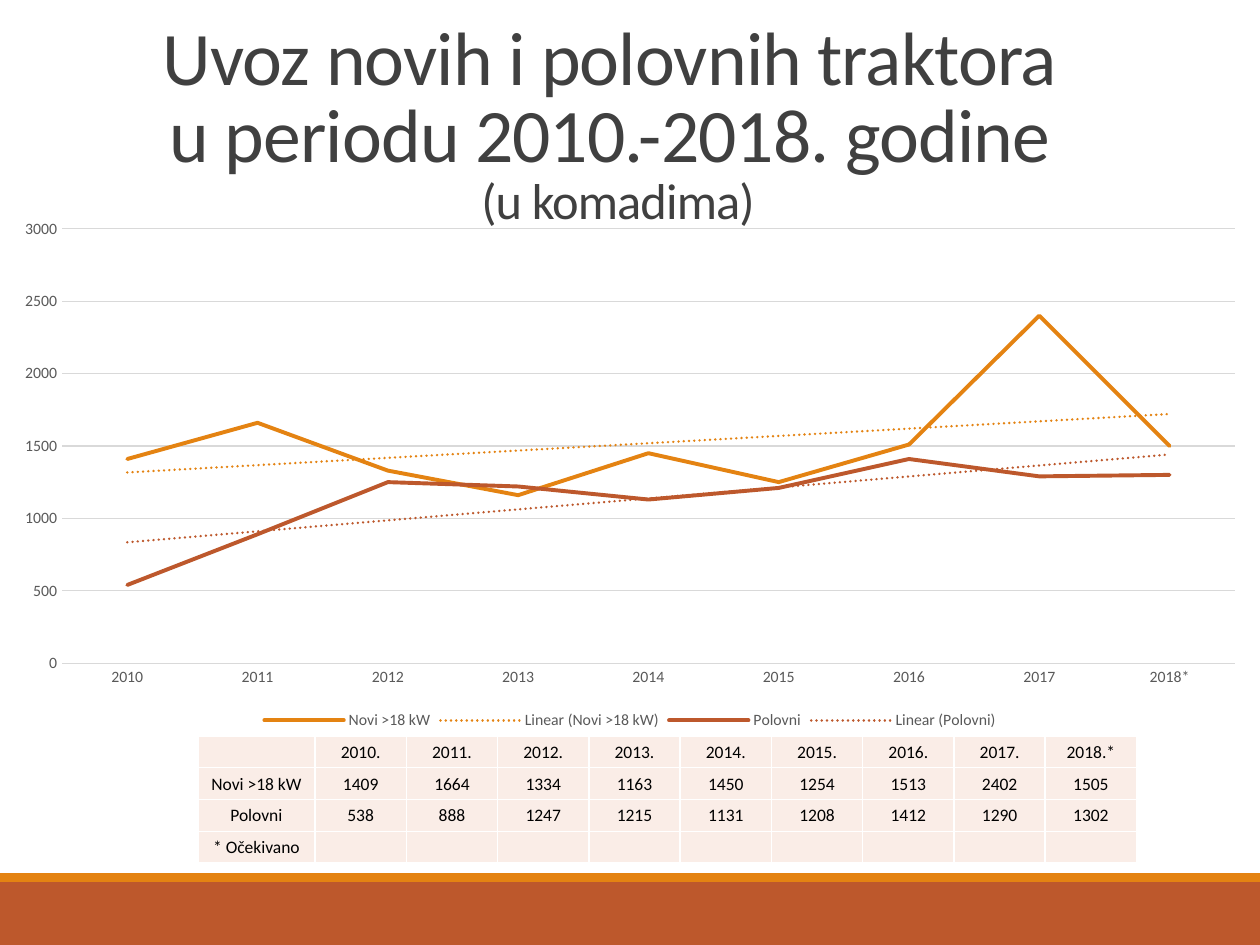
from lxml import etree
from pptx import Presentation
from pptx.chart.data import CategoryChartData
from pptx.dml.color import RGBColor
from pptx.enum.chart import XL_CHART_TYPE as ChartType, XL_LEGEND_POSITION as LegendPos, XL_TICK_MARK as Tick
from pptx.enum.shapes import MSO_SHAPE as Shape
from pptx.enum.text import MSO_ANCHOR as Anchor, PP_ALIGN as Align
from pptx.oxml import parse_xml
from pptx.oxml.ns import nsdecls, qn
from pptx.util import Inches, Pt

FONT = "Calibri"
ORANGE = RGBColor(0xE4, 0x83, 0x12)
RUST = RGBColor(0xBD, 0x58, 0x2C)
BLUSH = RGBColor(0xFA, 0xED, 0xE7)
BLACK = RGBColor(0, 0, 0)
TITLE_GREY = RGBColor(0x40, 0x40, 0x40)
LABEL_GREY = RGBColor(0x59, 0x59, 0x59)
GRID_GREY = RGBColor(0xD9, 0xD9, 0xD9)

# Content
TITLE_LINES = [
    ("Uvoz novih i polovnih traktora ", 43.2),
    ("u periodu 2010.-2018. godine ", 43.2),
    ("(u komadima)", 28.8),
]
YEARS = ["2010", "2011", "2012", "2013", "2014", "2015", "2016", "2017", "2018*"]
IMPORTS = [
    ("Novi >18 kW", [1409, 1664, 1334, 1163, 1450, 1254, 1513, 2402, 1505], ORANGE),
    ("Polovni", [538, 888, 1247, 1215, 1131, 1208, 1412, 1290, 1302], RUST),
]
FOOTNOTE = "* Očekivano"
TABLE_ROWS = [
    [""] + [year[:4] + "." + year[4:] for year in YEARS],
    *[[name, *map(str, values)] for name, values, _ in IMPORTS],
    [FOOTNOTE] + [""] * len(YEARS),
]
FOOTER_BARS = [(7, 0.5, RUST), (6.93, 0.07, ORANGE)]


def style_font(font, size, color):
    font.name = FONT
    font.size = Pt(size)
    font.color.rgb = color


def add_cell_borders(cell):
    tc_pr = cell._tc.get_or_add_tcPr()
    for side in ("lnL", "lnR", "lnT", "lnB"):
        tc_pr.append(parse_xml(
            f'<a:{side} {nsdecls("a")} w="12700"><a:solidFill>'
            f'<a:srgbClr val="FFFFFF"/></a:solidFill></a:{side}>'))


def add_linear_trend(series, color):
    trend = parse_xml(
        f'<c:trendline {nsdecls("c", "a")}><c:spPr><a:ln w="19050" cap="rnd">'
        f'<a:solidFill><a:srgbClr val="{color}"/></a:solidFill>'
        '<a:prstDash val="sysDot"/></a:ln></c:spPr>'
        '<c:trendlineType val="linear"/><c:dispRSqr val="0"/><c:dispEq val="0"/>'
        '</c:trendline>')
    series._element.find(qn("c:cat")).addprevious(trend)


prs = Presentation()
prs.slide_width, prs.slide_height = Inches(10), Inches(7.5)
slide = prs.slides.add_slide(prs.slide_layouts[6])

# Footer bars
for top, height, color in FOOTER_BARS:
    bar = slide.shapes.add_shape(Shape.RECTANGLE, 0, Inches(top), prs.slide_width, Inches(height))
    bar.shadow.inherit = False
    bar.fill.solid()
    bar.fill.fore_color.rgb = color
    bar.line.fill.background()

# Title
title = slide.shapes.add_textbox(Inches(0.2), Inches(0.28), Inches(9.41), Inches(1.59)).text_frame
title.word_wrap = True
title.vertical_anchor = Anchor.BOTTOM
heading = title.paragraphs[0]
heading.text = "\v".join(line for line, _ in TITLE_LINES)
heading.alignment = Align.CENTER
heading.line_spacing = 0.85
for run, (_, size) in zip(heading.runs, TITLE_LINES):
    style_font(run.font, size, TITLE_GREY)
    run.font._element.set("spc", "-50")
# Line breaks take the size of the line they end
for line_break, run in zip(heading._p.findall(qn("a:br")), heading.runs):
    etree.SubElement(line_break, qn("a:rPr")).set("sz", str(int(run.font.size.pt * 100)))

# Table
TABLE_WIDTH, TABLE_HEIGHT, NAME_WIDTH = Inches(7.45), Inches(1.01), Inches(0.93)
table = slide.shapes.add_table(len(TABLE_ROWS), len(YEARS) + 1, Inches(1.57), Inches(5.84),
                               TABLE_WIDTH, TABLE_HEIGHT).table
for index, column in enumerate(table.columns):
    column.width = (TABLE_WIDTH - NAME_WIDTH) // len(YEARS) if index else NAME_WIDTH
for row, texts in zip(table.rows, TABLE_ROWS):
    row.height = TABLE_HEIGHT // len(TABLE_ROWS)
    for cell, text in zip(row.cells, texts):
        add_cell_borders(cell)
        cell.fill.solid()
        cell.fill.fore_color.rgb = BLUSH
        cell.vertical_anchor = Anchor.MIDDLE
        cell.margin_left = cell.margin_right = cell.margin_top = Inches(0.01)
        cell.margin_bottom = 0
        cell.text_frame.text = text
        entry = cell.text_frame.paragraphs[0]
        entry.alignment = Align.CENTER
        for run in entry.runs:
            style_font(run.font, 10, BLACK)
        entry._p.get_or_add_endParaRPr().set("sz", "1000")

# Chart, plotted to the nearest ten
chart_data = CategoryChartData()
chart_data.categories = YEARS
for name, values, _ in IMPORTS:
    chart_data.add_series(name, [round(value, -1) for value in values])
chart = slide.shapes.add_chart(ChartType.LINE, 0, Inches(1.66), Inches(10), Inches(4.17), chart_data).chart
style_font(chart.font, 10, BLACK)
chart.has_title = False
chart.has_legend = True
chart.legend.position = LegendPos.BOTTOM
chart.legend.include_in_layout = False
style_font(chart.legend.font, 9, LABEL_GREY)
for series, (_, _, color) in zip(chart.plots[0].series, IMPORTS):
    series.smooth = False
    series.format.line.color.rgb = color
    series.format.line.width = Pt(2.25)
    series._element.find(qn("c:spPr")).find(qn("a:ln")).set("cap", "rnd")
    add_linear_trend(series, color)

# Axes
years_axis, units_axis = chart.category_axis, chart.value_axis
for axis in (years_axis, units_axis):
    axis.major_tick_mark = axis.minor_tick_mark = Tick.NONE
    style_font(axis.tick_labels.font, 9, LABEL_GREY)
units_axis.minimum_scale, units_axis.maximum_scale, units_axis.major_unit = 0, 3000, 500
units_axis.format.line.fill.background()
units_axis.has_major_gridlines = True
for line in (years_axis.format.line, units_axis.major_gridlines.format.line):
    line.color.rgb = GRID_GREY
    line.width = Pt(0.75)

prs.save("out.pptx")
